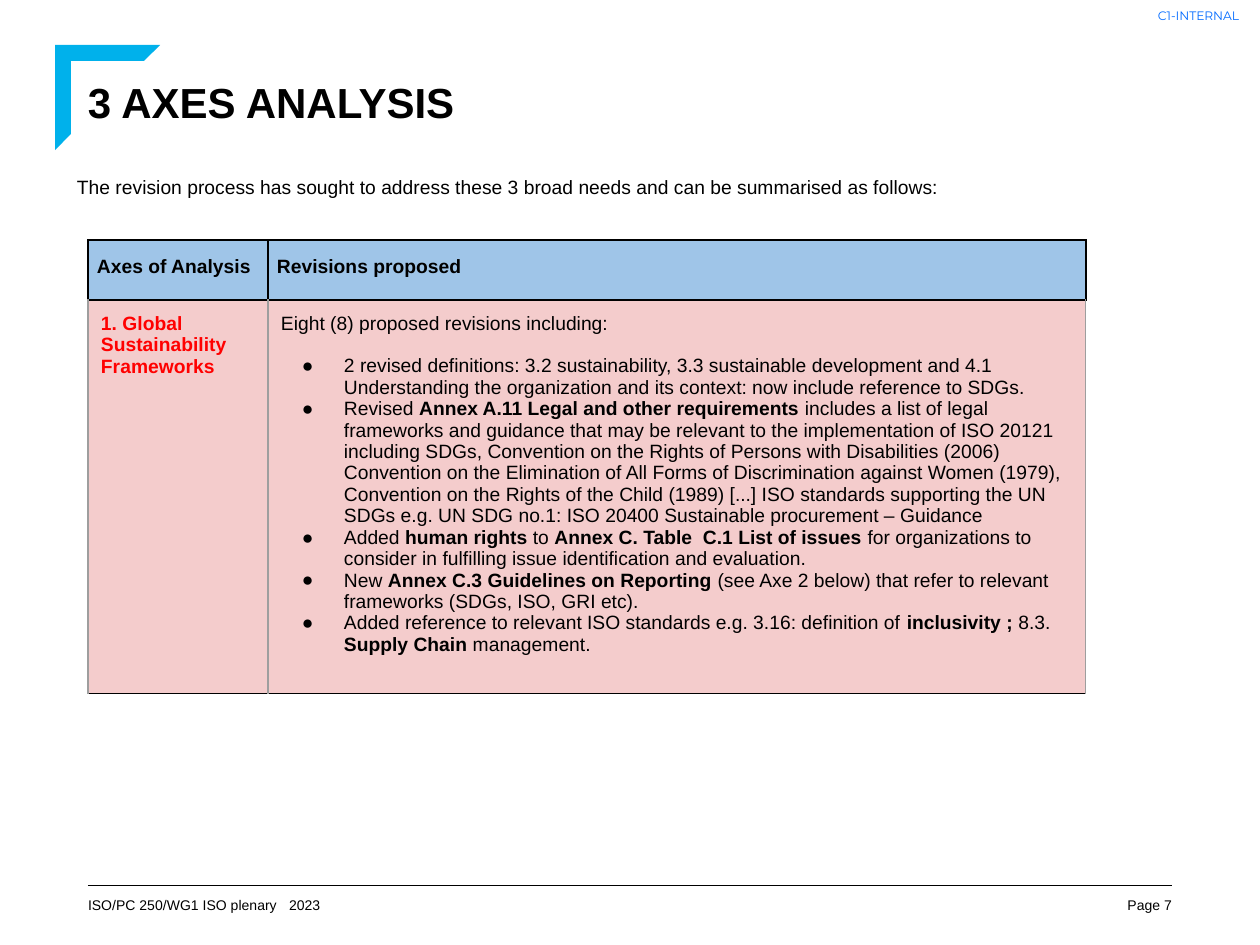
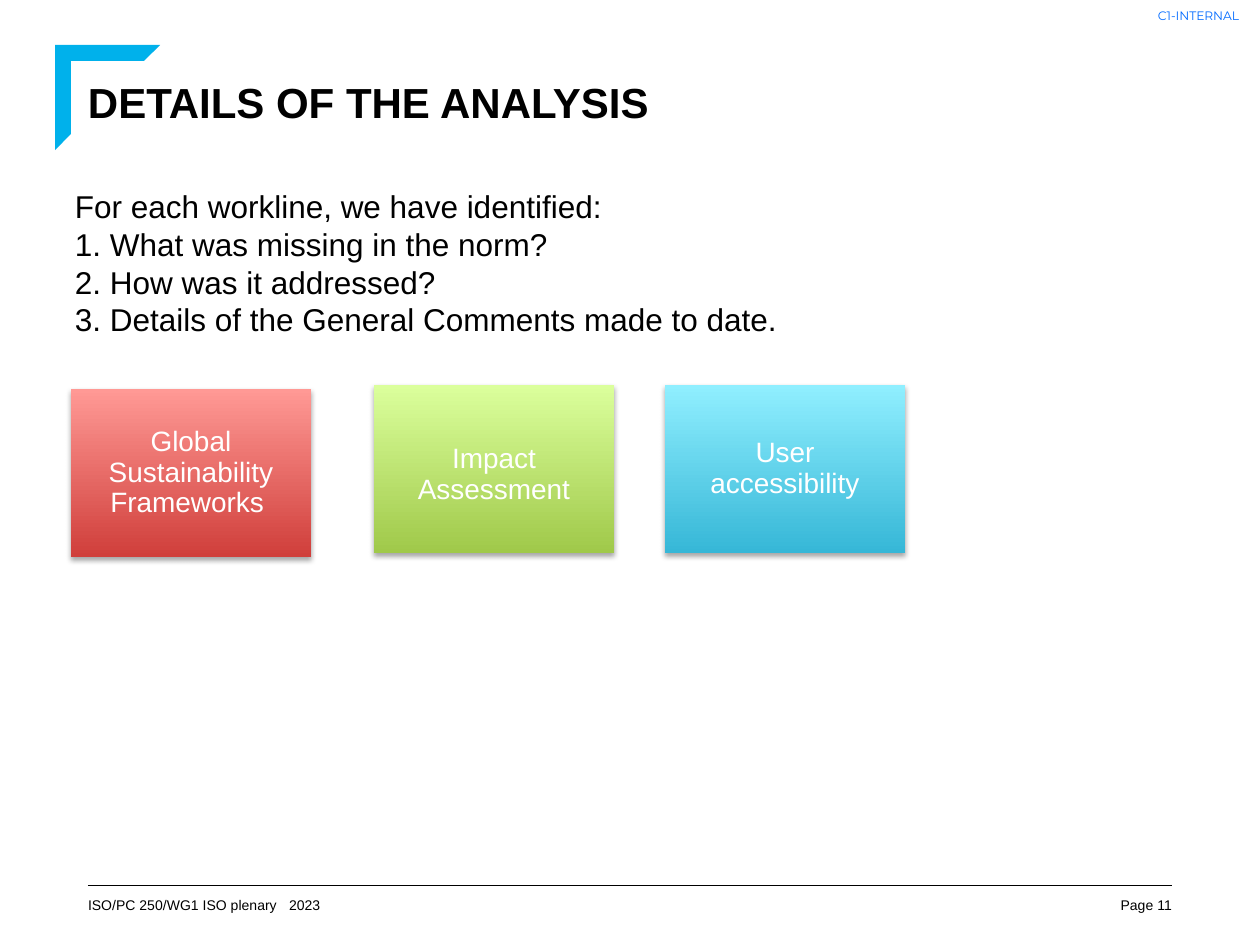
import lxml.etree
import pptx
import pptx.dml.color
import pptx.enum.shapes
import pptx.enum.text
import pptx.oxml
import pptx.oxml.ns
import pptx.util

SCALE = 914400 / 126  # EMU in one px
BLACK, WHITE, CYAN, LINK_BLUE, RED = "000000", "FFFFFF", "00B1EB", "006AFF", "FF0000"
HEADER_BLUE, BODY_PINK, GREY = "9FC5E8", "F4CCCC", "9E9E9E"
NAMESPACE = pptx.oxml.ns.nsdecls("a")
colour = pptx.dml.color.RGBColor.from_string
ALIGN = pptx.enum.text.PP_ALIGN
ANCHOR = pptx.enum.text.MSO_ANCHOR


def px(*lengths):
    """Turn px lengths into a list of EMU."""
    return [pptx.util.Emu(round(length * SCALE)) for length in lengths]


def write(holder, lines, size, ink=BLACK, font="Arial", align=ALIGN.LEFT,
          anchor=ANCHOR.TOP, margins=(0, 0, 0, 0)):
    """Fill a shape or cell; ** switches bold, margins are left, top, right, bottom."""
    frame = holder.text_frame
    frame.word_wrap = True
    # Cells keep margins and anchor on themselves, shapes on their frame
    settings = holder if hasattr(holder, "margin_left") else frame
    settings.vertical_anchor = anchor
    (settings.margin_left, settings.margin_top,
     settings.margin_right, settings.margin_bottom) = px(*margins)
    for number, line in enumerate(lines):
        para = frame.paragraphs[0] if number == 0 else frame.add_paragraph()
        para.alignment = align
        for part, words in enumerate(line.split("**")):
            if words:
                span = para.add_run()
                span.text = words
                span.font.size = pptx.util.Pt(size)
                span.font.name = font
                span.font.bold = part % 2 == 1
                span.font.color.rgb = colour(ink)
    return frame.paragraphs


deck = pptx.Presentation()
deck.slide_width, deck.slide_height = px(1260, 945)

# What both slides share
pages = []
for title, page_number in [("3 AXES ANALYSIS", 7), ("DETAILS OF THE ANALYSIS", 11)]:
    page = deck.slides.add_slide(deck.slide_layouts[6])
    pages.append(page)

    rule = page.shapes.add_connector(
        pptx.enum.shapes.MSO_CONNECTOR.STRAIGHT, *px(88, 885, 1172, 885))
    rule.line.color.rgb = colour(BLACK)
    rule.line.width = pptx.util.Pt(0.25)
    lxml.etree.SubElement(rule._element.spPr, pptx.oxml.ns.qn("a:effectLst"))

    builder = page.shapes.build_freeform(160, 45, scale=SCALE)
    builder.add_line_segments([(55, 45), (55, 150), (71, 134), (71, 61), (144, 61)])
    corner = builder.convert_to_shape()
    corner.shadow.inherit = False
    corner.fill.solid()
    corner.fill.fore_color.rgb = colour(CYAN)
    corner.line.fill.background()

    title_box = page.shapes.add_textbox(*px(88, 76, 1084, 106))
    write(title_box, [f"**{title}**"], 24)
    number_box = page.shapes.add_textbox(*px(1072, 897, 100, 16))
    write(number_box, [f"Page {page_number}"], 8, align=ALIGN.RIGHT)
    class_box = page.shapes.add_textbox(*px(1137, 0, 123, 31))
    write(class_box, ["C1-INTERNAL"], 7, LINK_BLUE, "Montserrat",
          ALIGN.CENTER, ANCHOR.MIDDLE)
    footer_box = page.shapes.add_textbox(*px(88, 897, 336, 16))
    footer = write(footer_box, ["ISO/PC 250/WG1 ISO plenary\t2023"], 8,
                   anchor=ANCHOR.MIDDLE)[0]
    footer._p.get_or_add_pPr().append(pptx.oxml.parse_xml(
        f'<a:tabLst {NAMESPACE}><a:tab pos="{px(201)[0]}" algn="l"/></a:tabLst>'))

axes_page, details_page = pages

# Axes of analysis
intro_box = axes_page.shapes.add_textbox(*px(64, 164, 1008, 155))
write(intro_box, ["The revision process has sought to address these 3 broad needs "
                  "and can be summarised as follows:"],
      11, align=ALIGN.JUSTIFY, margins=(13, 13, 13, 13))

revisions = [
    "Eight (8) proposed revisions including:",
    "2 revised definitions: 3.2 sustainability, 3.3 sustainable development and 4.1 "
    "Understanding the organization and its context: now include reference to SDGs.",
    "Revised **Annex A.11 Legal and other requirements **includes a list of legal "
    "frameworks and guidance that may be relevant to the implementation of ISO 20121 "
    "including SDGs, Convention on the Rights of Persons with Disabilities (2006) "
    "Convention on the Elimination of All Forms of Discrimination against Women (1979), "
    "Convention on the Rights of the Child (1989) [...] ISO standards supporting the UN "
    "SDGs e.g. UN SDG no.1: ISO 20400 Sustainable procurement – Guidance",
    "Added **human rights** to **Annex C. Table  C.1 List of issues **for organizations "
    "to consider in fulfilling issue identification and evaluation.",
    "New **Annex C.3 Guidelines on Reporting **(see Axe 2 below) that refer to relevant "
    "frameworks (SDGs, ISO, GRI etc).",
    "Added reference to relevant ISO standards e.g. 3.16: definition of "
    "**inclusivity ; **8.3. **Supply Chain** management.",
]
rows = [
    [["**Axes of Analysis**"], ["**Revisions proposed**"]],
    [["**1. Global Sustainability Frameworks**"], revisions],
]
table = axes_page.shapes.add_table(2, 2, *px(88, 240, 998, 453)).table
table.first_row = table.horz_banding = False
for column, width in zip(table.columns, px(180, 818)):
    column.width = width
for row, height in zip(table.rows, px(60, 393)):
    row.height = height

for row_index, row_texts in enumerate(rows):
    is_header = row_index == 0
    side_margin = 9 if is_header else 13
    side_border = (BLACK, 1) if is_header else (GREY, 0.75)
    for column_index, lines in enumerate(row_texts):
        cell = table.cell(row_index, column_index)
        ink = BLACK if is_header or column_index == 1 else RED
        paragraphs = write(cell, lines, 11, ink,
                           margins=(side_margin, 13, side_margin, 13))
        if is_header:
            paragraphs[0].line_spacing = 1.15
        cell.fill.solid()
        cell.fill.fore_color.rgb = colour(HEADER_BLUE if is_header else BODY_PINK)
        borders = {"lnL": side_border, "lnR": side_border,
                   "lnT": (BLACK, 1), "lnB": (BLACK, 1)}
        for position, (edge, (edge_colour, points)) in enumerate(borders.items()):
            cell._tc.get_or_add_tcPr().insert(position, pptx.oxml.parse_xml(
                f'<a:{edge} {NAMESPACE} w="{pptx.util.Pt(points)}"><a:solidFill>'
                f'<a:srgbClr val="{edge_colour}"/></a:solidFill></a:{edge}>'))

bullets = table.cell(1, 1).text_frame.paragraphs[1:]
indent, hanging = px(63, -42)
for para in bullets:
    properties = para._p.get_or_add_pPr()
    properties.set("marL", str(indent))
    properties.set("indent", str(hanging))
    for markup in (f'<a:buClr {NAMESPACE}><a:srgbClr val="{BLACK}"/></a:buClr>',
                   f'<a:buFont {NAMESPACE} typeface="Arial"/>',
                   f'<a:buChar {NAMESPACE} char="●"/>'):
        properties.append(pptx.oxml.parse_xml(markup))
bullets[0].space_before = pptx.util.Pt(12)

# Details of the analysis
questions_box = details_page.shapes.add_textbox(*px(62, 181, 1020, 165))
write(questions_box, ["For each workline, we have identified:",
                      "1. What was missing in the norm?",
                      "2. How was it addressed?",
                      "3. Details of the General Comments made to date."],
      18, align=ALIGN.JUSTIFY, margins=(13, 6, 13, 6))

# Label, left, top, top margin, lower colour, upper colour
axis_cards = [
    ("Global Sustainability Frameworks ", 71, 389, 20, "D03F3B", "FF9995"),
    ("Impact Assessment", 374, 385, 32, "A0C94A", "DBFF9C"),
    ("User accessibility", 665, 385, 20, "36B7D7", "90EFFF"),
]
for label, left, top, top_margin, lower, upper in axis_cards:
    card = details_page.shapes.add_shape(
        pptx.enum.shapes.MSO_SHAPE.RECTANGLE, *px(left, top, 240, 168))
    card.line.fill.background()
    card.fill.gradient()
    card.fill.gradient_angle = 90
    for stop, shade, position in zip(card.fill.gradient_stops, (lower, upper), (0, 1)):
        stop.color.rgb = colour(shade)
        stop.position = position
    card.shadow.inherit = False
    effects = card._element.spPr.find(pptx.oxml.ns.qn("a:effectLst"))
    effects.append(pptx.oxml.parse_xml(
        f'<a:outerShdw {NAMESPACE} blurRad="{pptx.util.Pt(3.1)}" '
        f'dist="{pptx.util.Pt(1.8)}" dir="5400000" rotWithShape="0">'
        f'<a:srgbClr val="{BLACK}"><a:alpha val="35000"/></a:srgbClr></a:outerShdw>'))
    paragraphs = write(card, [label], 16, WHITE, align=ALIGN.CENTER,
                       anchor=ANCHOR.MIDDLE, margins=(20, top_margin, 20, 20))
    paragraphs[0].line_spacing = 0.9

deck.save("out.pptx")
